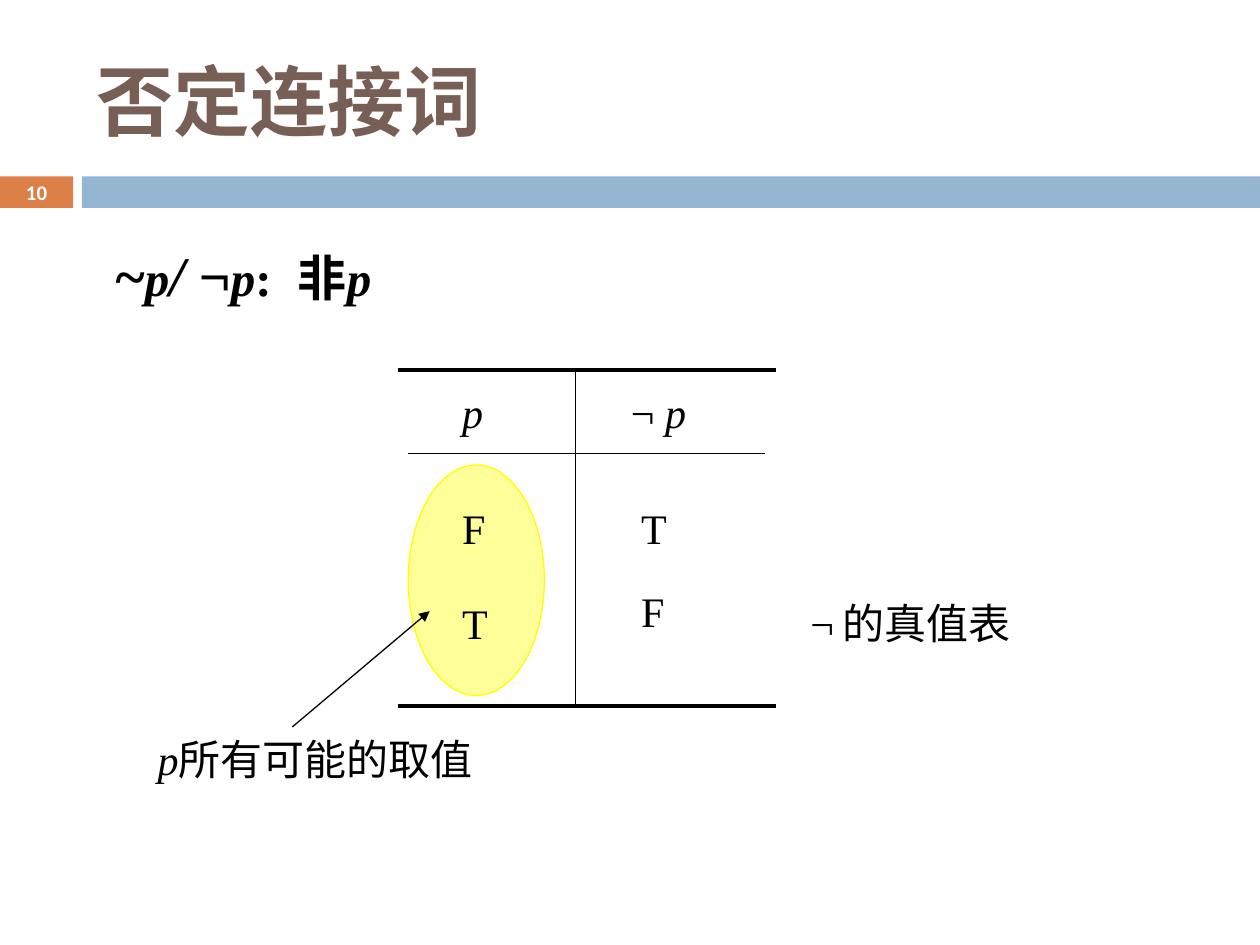
import pptx
import pptx.util
import pptx.dml.color
import pptx.enum.shapes
import pptx.enum.text
import pptx.oxml
import pptx.oxml.ns

Inches = pptx.util.Inches
SHAPES = pptx.enum.shapes.MSO_SHAPE
ALIGN = pptx.enum.text.PP_ALIGN
ANCHOR = pptx.enum.text.MSO_ANCHOR

COLORS = {"orange": "DD8047", "blue": "94B6D2", "brown": "775F55", "black": "000000",
          "white": "FFFFFF", "pale yellow": "FFFF99", "yellow": "FFFF00"}
SERIF, SANS, CHINESE = "Times New Roman", "Calibri", "Noto Sans CJK SC"

# Runs: (text, size, style), where style holds "b" for bold and "i" for italic
TITLE = [("否定连接词", 44, "b")]
SLIDE_NUMBER = [("10", 11.9, "b")]
FORMULA = [("~", 32, "b"), ("p", 28, "bi"), ("/", 32, "bi"), (" ¬", 32, "b"),
           ("p", 28, "bi"), (": ", 28, "b"), (" ", 32, "b"), ("非", 28, "b"), ("p", 28, "bi")]
TABLE_CAPTION = [(" ", 24, "i"), ("¬", 24, ""), (" ", 20, "i"), ("的真值表", 24, "")]
VALUES_CAPTION = [(" ", 24, ""), ("p", 24, "i"), ("所有可能的取值", 24, "")]

# Truth table entries: (left, top, runs)
TRUTH_TABLE = [
    (3.57, 3.02, [("p", 24, "i")]),
    (4.91, 3.02, [("¬ ", 24, ""), ("p", 24, "i")]),
    (3.57, 3.94, [("F", 24, "")]),
    (4.99, 3.94, [("T", 24, "")]),
    (3.57, 4.69, [("T", 24, "")]),
    (4.99, 4.6, [("F", 24, "")]),
]
TABLE_LEFT, TABLE_RIGHT, TABLE_TOP, TABLE_BOTTOM = 3.16, 6.16, 2.94, 5.6
DIVIDER_X, HEADER_Y = 4.57, 3.6
BAND_TOP, BAND_HEIGHT = 1.4, 0.25


def rgb(name):
    return pptx.dml.color.RGBColor.from_string(COLORS[name])


def add_block(slide, kind, box, fill, line=None):
    shape = slide.shapes.add_shape(kind, *map(Inches, box))
    shape.shadow.inherit = False
    shape.fill.solid()
    shape.fill.fore_color.rgb = rgb(fill)
    if line:
        shape.line.color.rgb = rgb(line)
        shape.line.width = pptx.util.Pt(0.75)
    else:
        shape.line.fill.background()


def add_text(slide, box, runs, font=SERIF, color="black", align=ALIGN.LEFT,
             anchor=ANCHOR.TOP, margin=0.1):
    frame = slide.shapes.add_textbox(*map(Inches, box)).text_frame
    frame.word_wrap = True
    frame.vertical_anchor = anchor
    frame.margin_left = frame.margin_right = Inches(margin)
    paragraph = frame.paragraphs[0]
    paragraph.alignment = align
    for text, size, style in runs:
        run = paragraph.add_run()
        run.text = text
        run.font.size = pptx.util.Pt(size)
        run.font.name = font
        run.font.bold = "b" in style
        run.font.italic = "i" in style
        run.font.color.rgb = rgb(color)
        east_asian = pptx.oxml.parse_xml(
            f'<a:ea {pptx.oxml.ns.nsdecls("a")} typeface="{CHINESE}"/>')
        run.font._element.find(pptx.oxml.ns.qn("a:latin")).addnext(east_asian)


def add_line(slide, start, end, width=0.75, arrow=False):
    connector = slide.shapes.add_connector(
        pptx.enum.shapes.MSO_CONNECTOR.STRAIGHT, *map(Inches, start + end))
    connector.line.color.rgb = rgb("black")
    connector.line.width = pptx.util.Pt(width)
    namespace = pptx.oxml.ns.nsdecls("a")
    if arrow:
        connector.line._get_or_add_ln().append(
            pptx.oxml.parse_xml(f'<a:tailEnd {namespace} type="triangle"/>'))
    connector._element.spPr.append(pptx.oxml.parse_xml(f"<a:effectLst {namespace}/>"))


def main():
    presentation = pptx.Presentation()
    presentation.slide_width, presentation.slide_height = Inches(10), Inches(7.5)
    slide = presentation.slides.add_slide(presentation.slide_layouts[6])

    number_box = (0, BAND_TOP, 0.58, BAND_HEIGHT)
    add_block(slide, SHAPES.RECTANGLE, number_box, "orange")
    add_block(slide, SHAPES.RECTANGLE, (0.65, BAND_TOP, 9.35, BAND_HEIGHT), "blue")
    add_text(slide, number_box, SLIDE_NUMBER, SANS, "white", ALIGN.CENTER, ANCHOR.MIDDLE, 0)
    add_text(slide, (0.67, 0.25, 8.92, 1.08), TITLE, SANS, "brown", anchor=ANCHOR.MIDDLE)
    add_text(slide, (0.82, 1.86, 5.17, 0.64), FORMULA)

    add_block(slide, SHAPES.OVAL, (3.24, 3.69, 1.08, 1.83), "pale yellow", "yellow")
    for y in (TABLE_TOP, TABLE_BOTTOM):
        add_line(slide, (TABLE_LEFT, y), (TABLE_RIGHT, y), 2.25)
    add_line(slide, (DIVIDER_X, TABLE_TOP), (DIVIDER_X, TABLE_BOTTOM))
    add_line(slide, (3.24, HEADER_Y), (6.07, HEADER_Y))
    for left, top, runs in TRUTH_TABLE:
        add_text(slide, (left, top, 1, 0.5), runs)

    add_text(slide, (6.25, 4.69, 3.24, 0.5), TABLE_CAPTION)
    add_text(slide, (1.07, 5.77, 3.5, 0.5), VALUES_CAPTION)
    add_line(slide, (2.32, 5.77), (3.41, 4.85), arrow=True)
    presentation.save("out.pptx")


if __name__ == "__main__":
    main()
